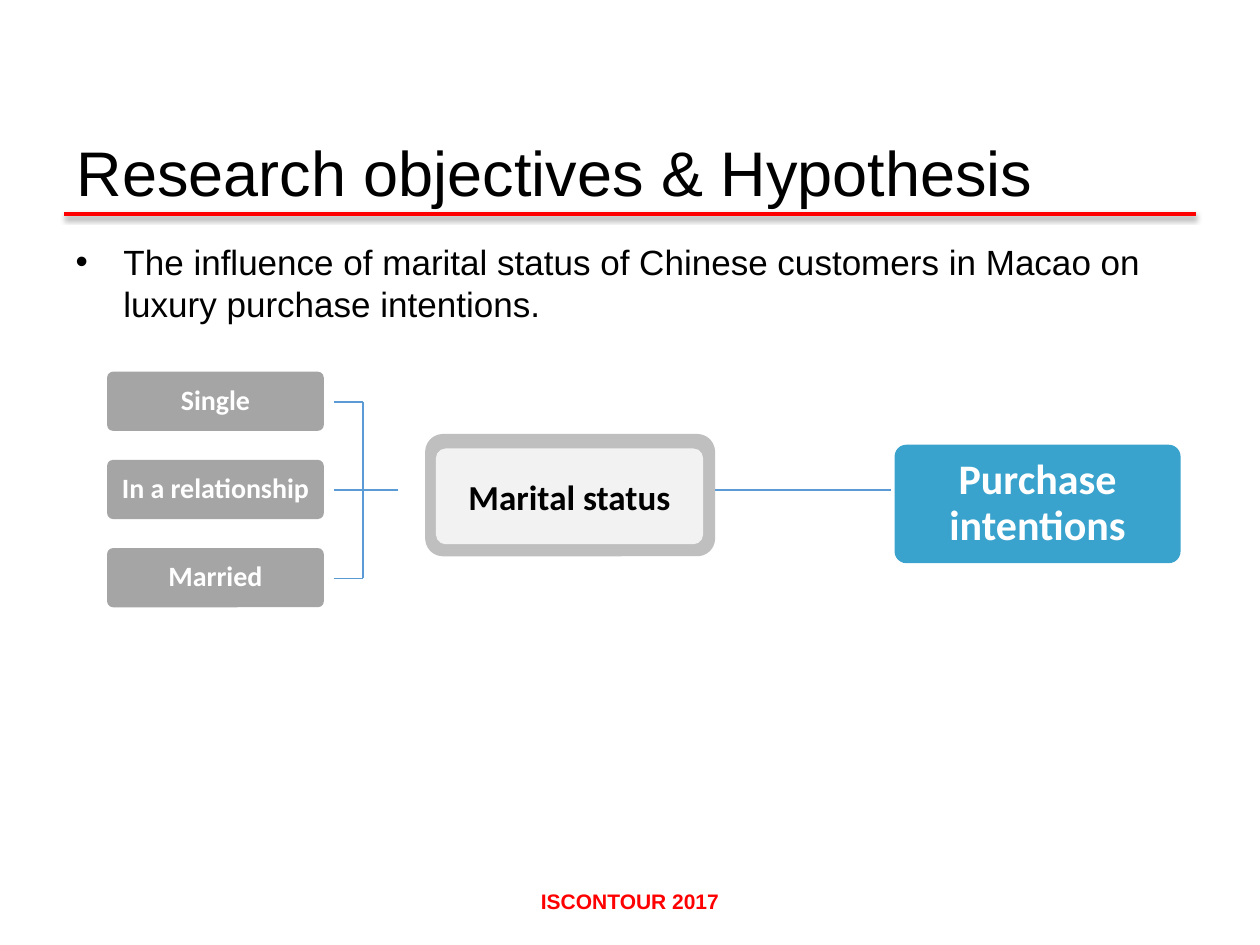
from lxml import etree
from pptx import Presentation
from pptx.dml.color import RGBColor as RGB
from pptx.enum.shapes import MSO_CONNECTOR as LINK, MSO_SHAPE as SHAPE
from pptx.enum.text import MSO_ANCHOR as ANCHOR, MSO_AUTO_SIZE as FIT, PP_ALIGN as ALIGN
from pptx.oxml import parse_xml
from pptx.oxml.ns import nsdecls, qn
from pptx.util import Pt

PX = 9144  # one px is a hundredth of an inch

BLACK = RGB(0x00, 0x00, 0x00)
WHITE = RGB(0xFF, 0xFF, 0xFF)
RED = RGB(0xFF, 0x00, 0x00)
BLUE = RGB(0x5B, 0x9B, 0xD5)
TEAL = RGB(0x39, 0xA3, 0xCD)
GRAY = RGB(0xA5, 0xA5, 0xA5)
SILVER = RGB(0xBF, 0xBF, 0xBF)
PALE = RGB(0xF2, 0xF2, 0xF2)

SHADOW = (
    f'<a:effectLst {nsdecls("a")}>'
    '<a:outerShdw blurRad="39370" dist="20320" dir="5400000" rotWithShape="0">'
    '<a:srgbClr val="000000"><a:alpha val="38000"/></a:srgbClr>'
    '</a:outerShdw></a:effectLst>'
)


def write(shape, text, size, color=BLACK, font="Arial", bold=False,
          align=ALIGN.LEFT, anchor=ANCHOR.TOP, space=1.0, inset=None, bullet=0):
    """Fill a shape with one paragraph; bullet is its hanging indent in px."""
    frame = shape.text_frame
    frame.word_wrap = True
    frame.auto_size = FIT.NONE
    frame.vertical_anchor = anchor
    if inset is not None:
        frame.margin_left = frame.margin_right = inset * PX
        frame.margin_top = frame.margin_bottom = inset * PX
    para = frame.paragraphs[0]
    para.alignment = align
    para.line_spacing = space
    para.space_before = Pt(0)
    if bullet:
        props = para._p.get_or_add_pPr()
        props.set("marL", str(bullet * PX))
        props.set("indent", str(-bullet * PX))
        etree.SubElement(props, qn("a:buFont")).set("typeface", "Arial")
        etree.SubElement(props, qn("a:buChar")).set("char", "•")
    run = para.add_run()
    run.text = text
    run.font.size = Pt(size)
    run.font.name = font
    run.font.bold = bold
    run.font.color.rgb = color


class Deck:
    def __init__(self):
        self.file = Presentation()
        self.file.slide_width = 1000 * PX
        self.file.slide_height = 750 * PX
        self.slide = self.file.slides.add_slide(self.file.slide_layouts[1])
        self.shapes = self.slide.shapes

    def holder(self, index, box, text, size, **style):
        shape = self.slide.placeholders[index]
        shape.left, shape.top, shape.width, shape.height = (v * PX for v in box)
        write(shape, text, size, **style)

    def label(self, box, text, size, **style):
        write(self.shapes.add_textbox(*(v * PX for v in box)), text, size, **style)

    def card(self, box, fill, text="", size=16, color=WHITE, edge=0, **style):
        shape = self.shapes.add_shape(SHAPE.ROUNDED_RECTANGLE, *(v * PX for v in box))
        shape.adjustments[0] = 0.1
        shape.shadow.inherit = False
        shape.fill.solid()
        shape.fill.fore_color.rgb = fill
        if edge:
            shape.line.color.rgb = fill
            shape.line.width = Pt(edge)
        else:
            shape.line.fill.background()
        if text:
            write(shape, text, size, color=color, font="Calibri", bold=True,
                  align=ALIGN.CENTER, anchor=ANCHOR.MIDDLE, **style)

    def line(self, start, end, color=BLUE, width=0.75, shadow=False):
        link = self.shapes.add_connector(LINK.STRAIGHT, *(v * PX for v in start + end))
        link.line.color.rgb = color
        link.line.width = Pt(width)
        effect = SHADOW if shadow else f'<a:effectLst {nsdecls("a")}/>'
        link._element.spPr.append(parse_xml(effect))


def main():
    deck = Deck()
    deck.line((51, 170), (949, 170), RED, 2, shadow=True)
    deck.label((319, 700, 362, 30), "ISCONTOUR 2017", 12, color=RED, bold=True,
               align=ALIGN.CENTER)
    deck.holder(0, (51, 21, 898, 150), "Research objectives & Hypothesis", 36,
                anchor=ANCHOR.BOTTOM)
    deck.holder(1, (50, 186, 900, 484),
                "The influence of marital status of Chinese customers in Macao "
                "on luxury purchase intentions.", 20, bullet=38)

    mid, step, trunk = 389, 70, 288
    deck.line((707, mid), (564, mid))
    deck.card((343, 350, 219, 86), SILVER, edge=8)
    deck.card((346, 356, 212, 76), PALE, "Marital status", 20, BLACK)
    deck.card((710, 353, 227, 94), TEAL, "Purchase intentions", 24,
              space=0.9, inset=2)

    for row, status in enumerate(("Single", "In a relationship", "Married")):
        y = mid + (row - 1) * step
        deck.card((85, y - 24, 172, 47), GRAY, status, space=0.9, inset=2)
        deck.line((265, y), (316 if y == mid else trunk, y))
    deck.line((trunk, mid - step), (trunk, mid + step))

    deck.file.save("out.pptx")


if __name__ == "__main__":
    main()
